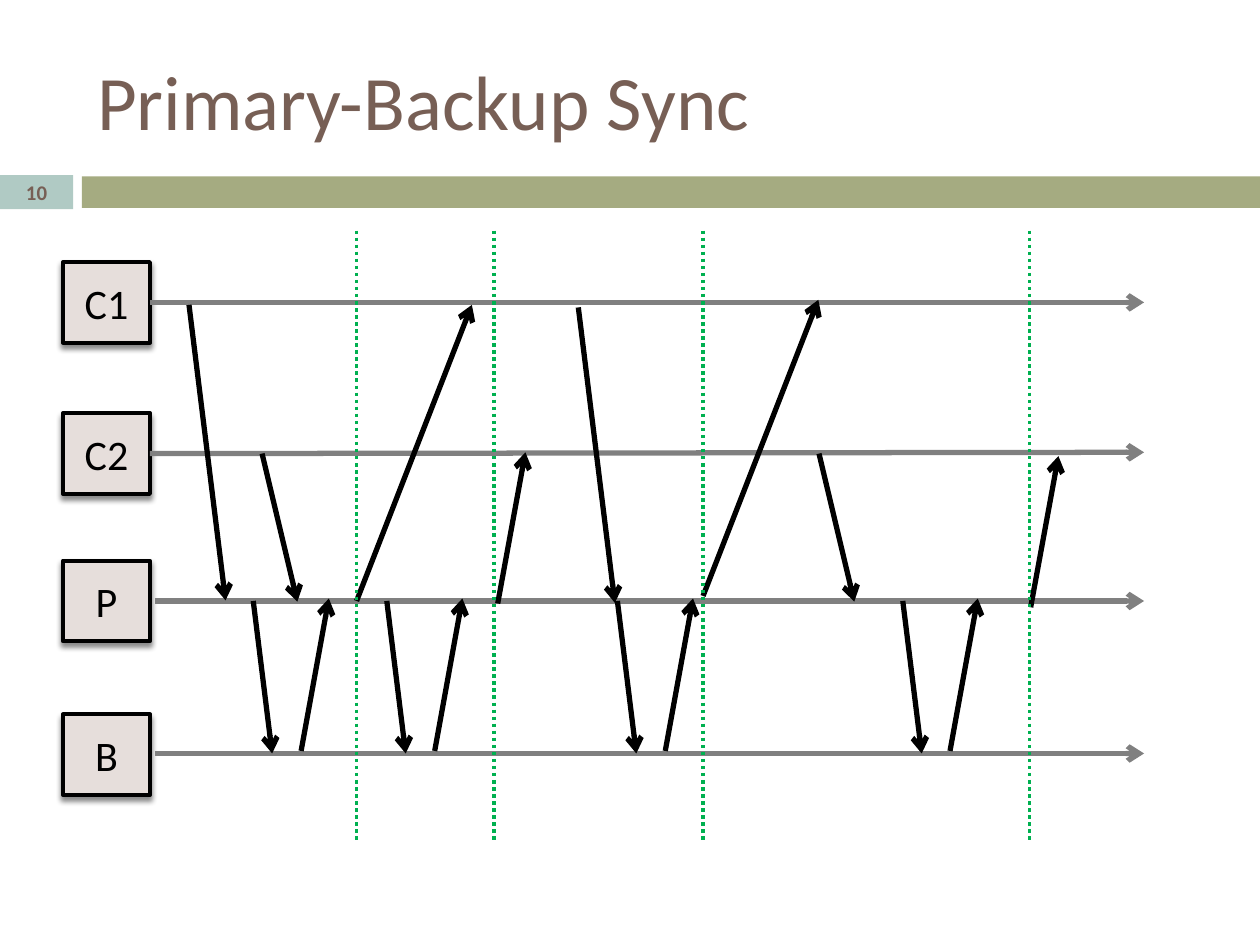
from dataclasses import dataclass

from lxml import etree
from pptx import Presentation
from pptx import util as u
from pptx.dml.color import RGBColor
from pptx.enum import dml, shapes, text
from pptx.oxml.ns import qn

# The slide is a grid of 100 columns by 75 rows
COLUMNS, ROWS = 100, 75
FONT = "Calibri"
BLACK, BROWN, GRAY, GREEN = "000000", "775F55", "808080", "00B050"
BOX_LEFT, BOX_WIDTH, BOX_HEIGHT = 5, 6.9, 6.4
LANE_END = 90.8
PRIMARY_ROW, BACKUP_ROW = 47.7, 59.6


@dataclass
class Lane:
    name: str
    top: float
    line_row: float
    joined: bool = False


@dataclass
class Message:
    """A kind of message: its run across and down, and where it starts."""
    across: float
    down: float
    starts: list[tuple[float, float]]


LANES = [
    Lane("C1", 20.8, 24, joined=True),
    Lane("C2", 32.8, 35.9, joined=True),
    Lane("P", 44.5, 47.7),
    Lane("B", 56.7, 59.8),
]
MESSAGES = [
    Message(2.9, 23.45, [(15, 24.2), (45.9, 24.4)]),                    # C1 request
    Message(2.8, 11.75, [(20.8, 36), (65, 36)]),                        # C2 request
    Message(9.15, -23.5, [(28.3, 47.7), (55.8, 47.3)]),                 # C1 reply
    Message(2.2, -12, [(39.5, 47.9), (81.8, 48.2)]),                    # C2 reply
    Message(1.5, 12.1, [(c, PRIMARY_ROW) for c in (20.1, 30.7, 49, 71.65)]),     # sync
    Message(2.2, -12.1, [(c, BACKUP_ROW) for c in (23.9, 34.5, 52.8, 75.4)]),    # ack
]
COMMIT_COLUMNS = [28.3, 39.2, 55.8, 81.7]

presentation = Presentation()
presentation.slide_width, presentation.slide_height = u.Inches(10), u.Inches(7.5)
slide = presentation.slides.add_slide(presentation.slide_layouts[5])


def x(column: float) -> int:
    return round(presentation.slide_width * column / COLUMNS)


def y(row: float) -> int:
    return round(presentation.slide_height * row / ROWS)


def color(value: str) -> RGBColor:
    return RGBColor.from_string(value)


def write(shape, words: str, size: float, fill: str = BLACK, bold: bool = False,
          align=text.PP_ALIGN.CENTER) -> None:
    frame = shape.text_frame
    frame.text = words
    frame.word_wrap = True
    frame.auto_size = text.MSO_AUTO_SIZE.NONE
    frame.vertical_anchor = text.MSO_ANCHOR.MIDDLE
    paragraph = frame.paragraphs[0]
    paragraph.alignment = align
    font = paragraph.runs[0].font
    font.name, font.size, font.bold = FONT, u.Pt(size), bold
    font.color.rgb = color(fill)


def add_box(left: float, top: float, width: float, height: float, fill: str,
            kind=shapes.MSO_SHAPE.RECTANGLE):
    shape = slide.shapes.add_shape(kind, x(left), y(top), x(width), y(height))
    shape.shadow.inherit = False
    shape.fill.solid()
    shape.fill.fore_color.rgb = color(fill)
    shape.line.fill.background()
    return shape


def add_shadow(shape) -> None:
    effects = shape._element.spPr.find(qn("a:effectLst"))
    shadow = etree.SubElement(effects, qn("a:outerShdw"), blurRad=str(u.Pt(3)),
                              dist=str(u.Pt(2.4)), dir="5400000", rotWithShape="0")
    tint = etree.SubElement(shadow, qn("a:srgbClr"), val=BLACK)
    etree.SubElement(tint, qn("a:alpha"), val="45000")


def add_line(start: tuple[float, float], end: tuple[float, float], stroke: str,
             width: float = 3, arrow: bool = True, dash=None):
    line = slide.shapes.add_connector(shapes.MSO_CONNECTOR.STRAIGHT,
                                      x(start[0]), y(start[1]), x(end[0]), y(end[1]))
    line.line.color.rgb = color(stroke)
    line.line.width = u.Pt(width)
    if dash is not None:
        line.line.dash_style = dash
    if arrow:
        etree.SubElement(line.line._get_or_add_ln(), qn("a:tailEnd"), type="arrow")
    etree.SubElement(line._element.spPr, qn("a:effectLst"))
    return line


def add_lane(lane: Lane) -> None:
    box = add_box(BOX_LEFT, lane.top, BOX_WIDTH, BOX_HEIGHT, "E6DEDB",
                  shapes.MSO_SHAPE.FLOWCHART_PROCESS)
    box.line.color.rgb = color(BLACK)
    box.line.width = u.Pt(2.25)
    add_shadow(box)
    write(box, lane.name, 24)
    line = add_line((12.3, lane.line_row), (LANE_END, lane.line_row), GRAY)
    if lane.joined:
        line.begin_connect(box, 3)


# Title
title = slide.shapes.title
title.left, title.top, title.width, title.height = x(6.7), y(2.5), x(89.2), y(10.8)
write(title, "Primary-Backup Sync", 44, BROWN, align=text.PP_ALIGN.LEFT)

# Band with the slide number
add_box(6.5, 14, 93.5, 2.5, "A5AB81")
number = add_box(0, 13.9, 5.8, 2.7, "B0CAC4")
write(number, "10", 11.9, BROWN, bold=True)

# Lanes for clients, primary and backup
for lane in LANES:
    add_lane(lane)

# Messages between lanes
for message in MESSAGES:
    for column, row in message.starts:
        add_line((column, row), (column + message.across, row + message.down), BLACK)

# Commit points
for column in COMMIT_COLUMNS:
    add_line((column, 18.3), (column, 66.7), GREEN, width=2, arrow=False,
             dash=dml.MSO_LINE.ROUND_DOT)

presentation.save("out.pptx")
